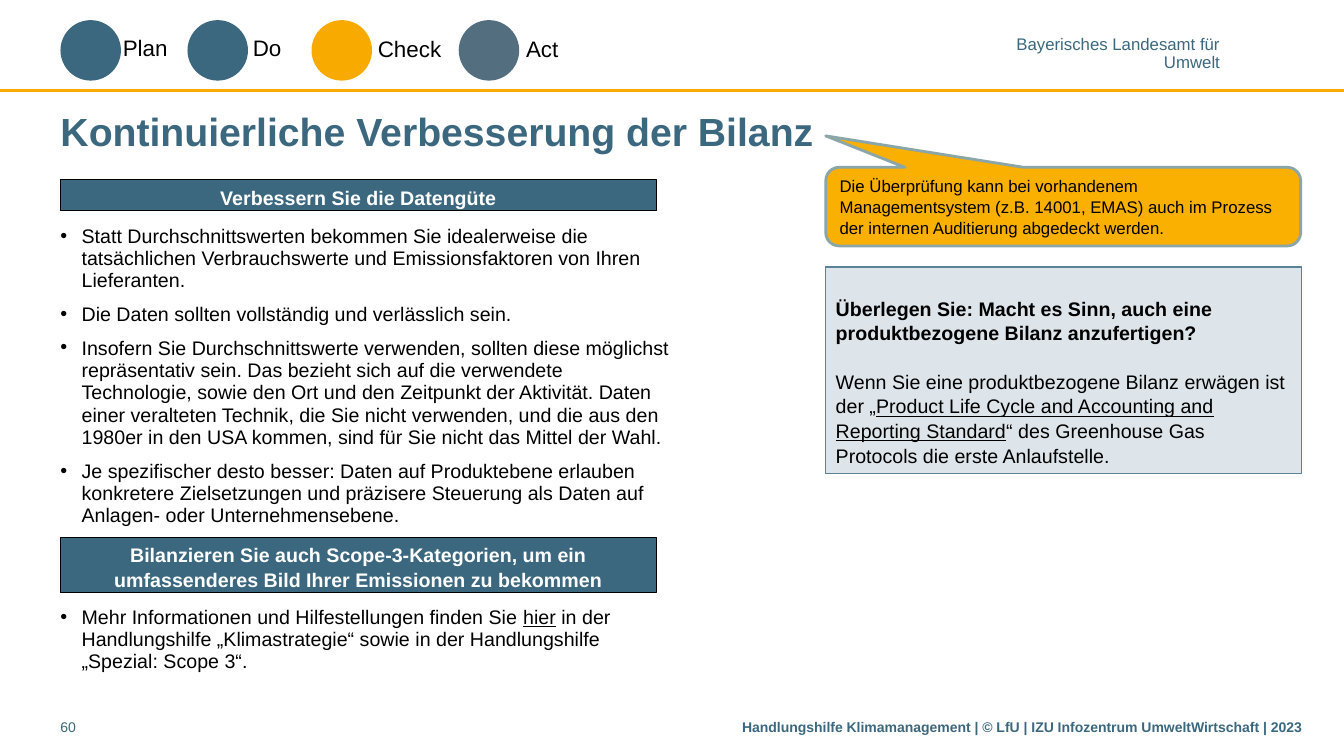
from lxml.etree import SubElement
from pptx import Presentation
from pptx.dml.color import RGBColor
from pptx.enum.shapes import MSO_CONNECTOR, MSO_SHAPE
from pptx.enum.text import MSO_ANCHOR, PP_ALIGN
from pptx.oxml.ns import qn
from pptx.util import Inches, Pt

BLUE = RGBColor(0x3B, 0x68, 0x7F)
SLATE = RGBColor(0x52, 0x6E, 0x7F)
AMBER = RGBColor(0xF9, 0xAA, 0x00)
CALLOUT_FILL = RGBColor(0xF9, 0xB0, 0x00)
CALLOUT_LINE = RGBColor(0x8A, 0xA6, 0xA8)
PANEL_FILL = RGBColor(0xDE, 0xE5, 0xEA)
PANEL_LINE = RGBColor(0x5C, 0x83, 0x95)
BLACK = RGBColor(0, 0, 0)
WHITE = RGBColor(0xFF, 0xFF, 0xFF)

prs = Presentation()
prs.slide_width, prs.slide_height = Inches(13.33), Inches(7.5)
slide = prs.slides.add_slide(prs.slide_layouts[6])
shapes = slide.shapes


def add_block(kind, box, fill, line=None, width=0):
    block = shapes.add_shape(kind, *[Inches(v) for v in box])
    block.shadow.inherit = False
    block.fill.solid()
    block.fill.fore_color.rgb = fill
    if line is None:
        block.line.fill.background()
    else:
        block.line.color.rgb = line
        block.line.width = Pt(width)
    return block


def write(target, paragraphs, size, color=BLACK, bold=False, align=PP_ALIGN.LEFT,
          anchor=MSO_ANCHOR.TOP, side=0.1, spacing=None, before=0, bullet=False):
    """Fill a shape, or a new text box if target is a box; odd pieces are underlined."""
    if isinstance(target, tuple):
        target = shapes.add_textbox(*[Inches(v) for v in target])
    frame = target.text_frame
    frame.word_wrap = True
    frame.vertical_anchor = anchor
    frame.margin_left = frame.margin_right = Inches(side)
    for index, pieces in enumerate(paragraphs):
        paragraph = frame.add_paragraph() if index else frame.paragraphs[0]
        if bullet:
            props = paragraph._p.get_or_add_pPr()
            props.set("marL", str(Inches(0.21)))
            props.set("indent", str(-Inches(0.21)))
            SubElement(props, qn("a:buFont"), typeface="Arial")
            SubElement(props, qn("a:buChar"), char="•")
        paragraph.alignment = align
        if spacing:
            paragraph.line_spacing = spacing
        if index and before:
            paragraph.space_before = Pt(before)
        font = paragraph.font
        font.name, font.size, font.bold = "Arial", Pt(size), bold
        font.color.rgb = color
        for position, piece in enumerate(pieces):
            run = paragraph.add_run()
            run.text = piece
            if position % 2:
                run.font.underline = True
    return frame


# Header: rule, agency and cycle steps
header_rule = shapes.add_connector(MSO_CONNECTOR.STRAIGHT, 0, Inches(0.9),
                                   prs.slide_width, Inches(0.9))
header_rule.line.color.rgb = AMBER
header_rule.line.width = Pt(2)
SubElement(header_rule._element.spPr, qn("a:effectLst"))

agency = write((9.1, 0.37, 3, 0.34), [["Bayerisches Landesamt für"], ["Umwelt"]], 12, BLUE,
               align=PP_ALIGN.RIGHT, side=0, spacing=0.85)
agency.margin_top = agency.margin_bottom = 0

for step, circle_left, label_left, label_top, color in [
    ("Plan", 0.6, 1.12, 0.29, BLUE),
    ("Do", 1.86, 2.41, 0.29, BLUE),
    ("Check", 3.09, 3.65, 0.3, AMBER),
    ("Act", 4.55, 5.12, 0.3, SLATE),
]:
    add_block(MSO_SHAPE.OVAL, (circle_left, 0.2, 0.6, 0.6), color)
    write((label_left, label_top, 1, 0.37), [[step]], 16)

# Title
write((0.6, 1.02, 12.31, 0.55), [["Kontinuierliche Verbesserung der Bilanz"]], 28, BLUE,
      bold=True, anchor=MSO_ANCHOR.MIDDLE, side=0)

# Left column: section headings, each with its bullets
sections = [
    (1.78, 0.31, "Verbessern Sie die Datengüte", 2.18, 3.1, [
        ["Statt Durchschnittswerten bekommen Sie idealerweise die tatsächlichen "
         "Verbrauchswerte und Emissionsfaktoren von Ihren Lieferanten."],
        ["Die Daten sollten vollständig und verlässlich sein."],
        ["Insofern Sie Durchschnittswerte verwenden, sollten diese möglichst repräsentativ "
         "sein. Das bezieht sich auf die verwendete Technologie, sowie den Ort und den "
         "Zeitpunkt der Aktivität. Daten einer veralteten Technik, die Sie nicht verwenden, "
         "und die aus den 1980er in den USA kommen, sind für Sie nicht das Mittel der Wahl."],
        ["Je spezifischer desto besser: Daten auf Produktebene erlauben konkretere "
         "Zielsetzungen und präzisere Steuerung als Daten auf Anlagen- oder "
         "Unternehmensebene."],
    ]),
    (5.33, 0.55, "Bilanzieren Sie auch Scope-3-Kategorien, um ein umfassenderes Bild Ihrer "
     "Emissionen zu bekommen", 5.96, 0.8, [
         ["Mehr Informationen und Hilfestellungen finden Sie ", "hier",
          " in der Handlungshilfe „Klimastrategie“ sowie in der Handlungshilfe "
          "„Spezial: Scope 3“."],
     ]),
]
for heading_top, heading_height, heading, list_top, list_height, bullets in sections:
    bar = add_block(MSO_SHAPE.RECTANGLE, (0.6, heading_top, 5.91, heading_height),
                    BLUE, BLACK, 0.75)
    write(bar, [[heading]], 14, WHITE, bold=True, align=PP_ALIGN.CENTER, spacing=1.05)
    write((0.6, list_top, 6.06, list_height), bullets, 14, side=0, spacing=Pt(16),
          before=8, bullet=True)

# Right column: audit callout
audit = add_block(MSO_SHAPE.ROUNDED_RECTANGULAR_CALLOUT, (8.19, 1.66, 4.71, 0.78),
                  CALLOUT_FILL, CALLOUT_LINE, 2)
for index, value in enumerate((-0.5, -0.9, 0.17)):
    audit.adjustments[index] = value
write(audit, [["Die Überprüfung kann bei vorhandenem Managementsystem (z.B. 14001, EMAS) auch im "
               "Prozess der internen Auditierung abgedeckt werden."]], 12,
      anchor=MSO_ANCHOR.MIDDLE, spacing=1.05)

# Right column: product footprint panel
panel = add_block(MSO_SHAPE.RECTANGLE, (8.19, 2.65, 4.72, 2.05), PANEL_FILL, PANEL_LINE, 1)
product = write(panel, [
    ["Überlegen Sie: Macht es Sinn, auch eine produktbezogene Bilanz anzufertigen?"],
    ["Wenn Sie eine produktbezogene Bilanz erwägen ist der „",
     "Product Life Cycle and Accounting and Reporting Standard",
     "“ des Greenhouse Gas Protocols die erste Anlaufstelle."],
], 14, spacing=1.05, before=17)
product.margin_top = Inches(0.28)
product.paragraphs[0].font.bold = True

# Footer
write((5.92, 7.08, 6.99, 0.31),
      [["Handlungshilfe Klimamanagement | © LfU | IZU Infozentrum UmweltWirtschaft | 2023"]],
      10, BLUE, bold=True, align=PP_ALIGN.RIGHT, side=0)
write((0.6, 7.08, 0.7, 0.31), [["60"]], 10, BLUE, side=0)

prs.save("out.pptx")
